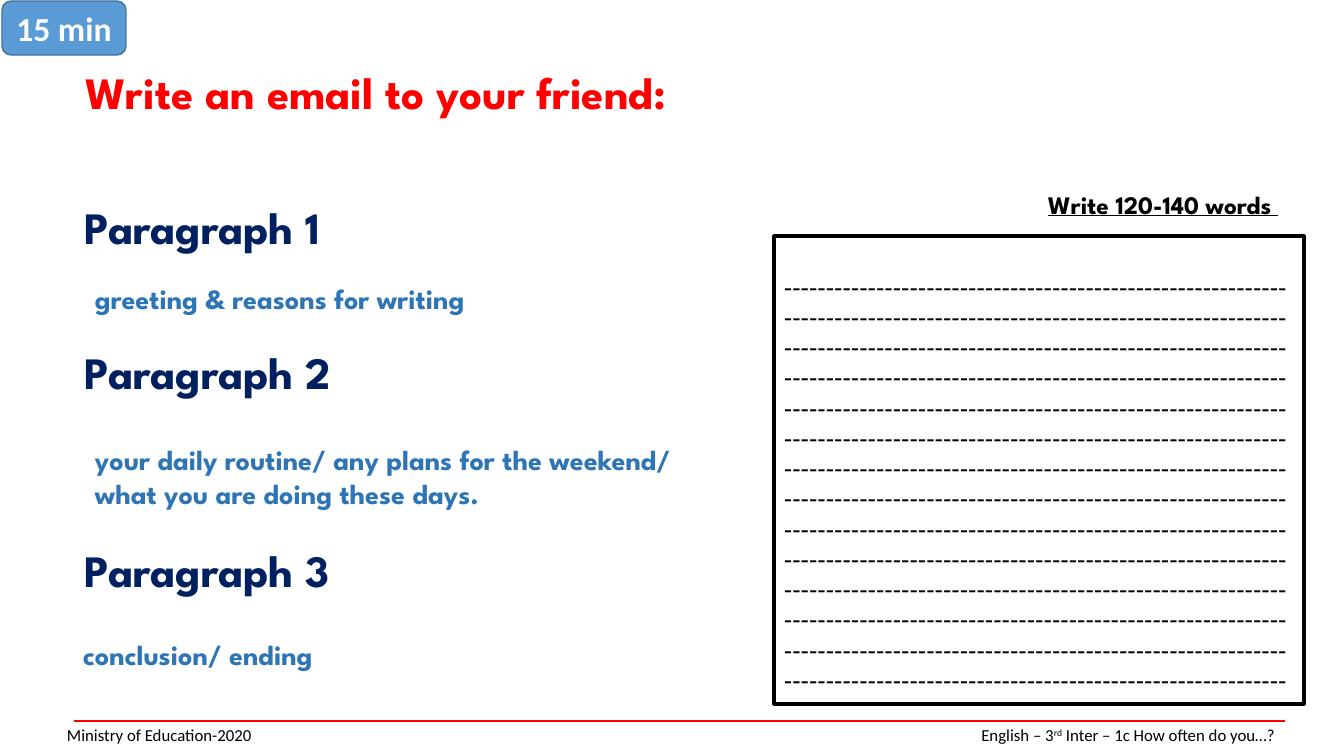
from lxml import etree
from pptx import Presentation
from pptx import util as u
from pptx.dml.color import RGBColor
from pptx.enum import shapes, text
from pptx.oxml.ns import qn

PX_PER_INCH = 100.8
COLORS = {
    "red": "FF0000",
    "navy": "002060",
    "blue": "2E75B6",
    "black": "000000",
    "white": "FFFFFF",
    "badge": "5B9BD5",
    "badge_edge": "43739E",
}
HEADING_FONT = "League Spartan"
PARAGRAPHS = [
    # heading top, prompt left, prompt top, prompt lines
    (195, 85, 277, ["greeting & reasons for writing"]),
    (340, 85, 438, ["your daily routine/ any plans for the weekend/",
                    "what you are doing these days."]),
    (538, 73, 633, ["conclusion/ ending"]),
]


def px(length):
    return u.Emu(round(length * 914400 / PX_PER_INCH))


def color(name):
    return RGBColor.from_string(COLORS[name])


def place(shape, left, top, width, height):
    shape.left, shape.top = px(left), px(top)
    shape.width, shape.height = px(width), px(height)


def add_span(para, words, size, tint, font=HEADING_FONT, bold=True):
    span = para.add_run()
    span.text = words
    span.font.name = font
    span.font.size = u.Pt(size)
    span.font.bold = bold
    span.font.color.rgb = color(tint)
    return span


def add_lines(page, left, top, width, height, lines, size, tint):
    """Add a text box with one heading-font paragraph per line."""
    box = page.shapes.add_textbox(px(left), px(top), px(width), px(height))
    frame = box.text_frame
    frame.word_wrap = True
    for index, line in enumerate(lines):
        para = frame.add_paragraph() if index else frame.paragraphs[0]
        add_span(para, line, size, tint)
    return box


def add_shape(page, kind, left, top, width, height, edge, weight):
    shape = page.shapes.add_shape(kind, px(left), px(top), px(width), px(height))
    shape.shadow.inherit = False
    shape.line.color.rgb = color(edge)
    shape.line.width = u.Pt(weight)
    return shape


def add_title(page, left, top, width, height):
    title = page.shapes.title
    place(title, left, top, width, height)
    frame = title.text_frame
    frame.auto_size = text.MSO_AUTO_SIZE.NONE
    frame.vertical_anchor = text.MSO_ANCHOR.TOP
    para = frame.paragraphs[0]
    para.alignment = text.PP_ALIGN.LEFT
    add_span(para, "Write an email to your friend:", 32, "red")


def add_timer(page, left, top, width, height):
    badge = add_shape(page, shapes.MSO_SHAPE.ROUNDED_RECTANGLE,
                      left, top, width, height, "badge_edge", 1)
    badge.fill.solid()
    badge.fill.fore_color.rgb = color("badge")
    badge.text_frame.vertical_anchor = text.MSO_ANCHOR.MIDDLE
    para = badge.text_frame.paragraphs[0]
    para.alignment = text.PP_ALIGN.CENTER
    add_span(para, "15 min", 24, "white", "Calibri")


def add_outline(page, left, width):
    for number, (top, prompt_left, prompt_top, prompt) in enumerate(PARAGRAPHS, 1):
        add_lines(page, left, top, width, 64, [f"Paragraph {number}"], 32, "navy")
        add_lines(page, prompt_left, prompt_top, 660, 10 + 37 * len(prompt),
                  prompt, 20, "blue")


def add_writing_area(page, left, top, width, height):
    label = add_lines(page, left + 264, top - 52, 272, 40,
                      ["Write 120-140 words "], 18, "black")
    label.text_frame.paragraphs[0].runs[0].font.underline = True
    sheet = add_shape(page, shapes.MSO_SHAPE.RECTANGLE,
                      left, top, width, height, "black", 2.25)
    sheet.fill.background()
    frame = sheet.text_frame
    frame.vertical_anchor = text.MSO_ANCHOR.TOP
    frame.margin_top = px(35)
    for row in range(14):
        para = frame.add_paragraph() if row else frame.paragraphs[0]
        para.alignment = text.PP_ALIGN.LEFT
        para.line_spacing = u.Pt(21.6)
        add_span(para, "-" * 60, 18, "black", "Arial", False)


def add_footer(page, left, top, width, height):
    rule = page.shapes.add_connector(shapes.MSO_CONNECTOR.STRAIGHT, px(left + 7),
                                     px(top), px(left + width + 10), px(top))
    rule.line.color.rgb = color("red")
    rule.line.width = u.Pt(0.75)
    etree.SubElement(rule._element.spPr, qn("a:effectLst"))

    box = page.shapes.add_textbox(px(left), px(top), px(width), px(height))
    frame = box.text_frame
    frame.word_wrap = True
    frame.margin_left = frame.margin_right = 0
    frame.margin_top = frame.margin_bottom = 0
    frame.vertical_anchor = text.MSO_ANCHOR.MIDDLE
    para = frame.paragraphs[0]
    tabs = etree.SubElement(para._p.get_or_add_pPr(), qn("a:tabLst"))
    etree.SubElement(tabs, qn("a:tab"), pos=str(px(width)), algn="r")
    for words in ("Ministry of Education-2020\tEnglish – 3", "rd",
                  " Inter – 1c How often do you…?"):
        span = add_span(para, words, 12, "black", "Calibri", False)
        if words == "rd":
            span.font._element.set("baseline", "30000")


def main():
    deck = Presentation()
    deck.slide_width, deck.slide_height = px(1344), px(756)
    page = deck.slides.add_slide(deck.slide_layouts.get_by_name("Title Only"))
    add_title(page, 75, 60, 1200, 119)
    add_outline(page, 75, 341)
    add_writing_area(page, 774, 236, 530, 468)
    add_timer(page, 2, 1, 124, 54)
    add_footer(page, 67, 721, 1208, 28)
    deck.save("out.pptx")


if __name__ == "__main__":
    main()
